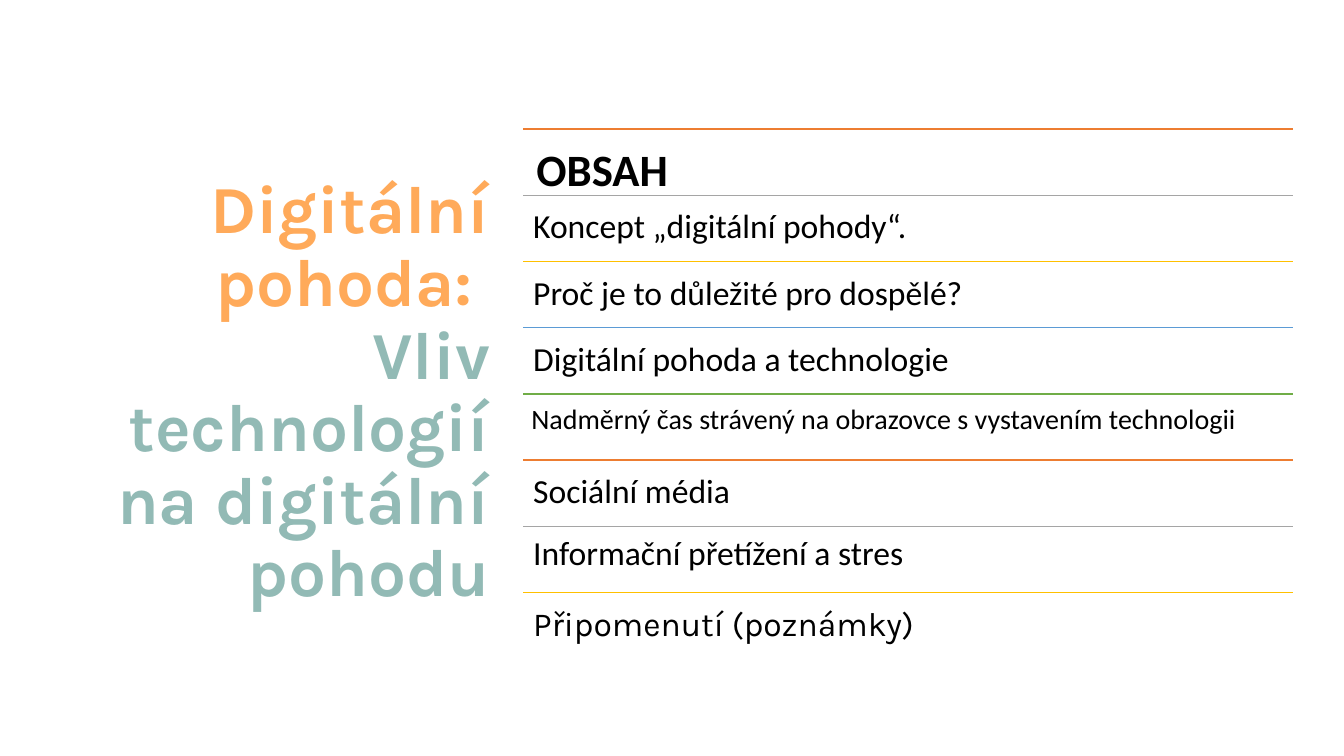
from pptx import Presentation
from pptx.dml.color import RGBColor
from pptx.enum import shapes, text
from pptx.oxml import ns
from pptx.util import Inches, Pt
from lxml import etree

ORANGE = RGBColor(0xFF, 0xAA, 0x5A)
TEAL = RGBColor(0x92, 0xBA, 0xB5)
BLACK = RGBColor(0, 0, 0)
RUST = RGBColor(0xED, 0x7D, 0x31)
GREY = RGBColor(0xA5, 0xA5, 0xA5)
GOLD = RGBColor(0xFF, 0xC0, 0x00)
BLUE = RGBColor(0x5B, 0x9B, 0xD5)
GREEN = RGBColor(0x70, 0xAD, 0x47)

LEFT, TOP, WIDTH, ROW_HEIGHT = 5.19, 1.28, 7.63, 0.657


def add_run(paragraph, words, size, font, color, bold=False):
    run = paragraph.add_run()
    run.text = words
    run.font.size = Pt(size)
    run.font.name = font
    run.font.bold = bold
    run.font.color.rgb = color


presentation = Presentation()
presentation.slide_width = Inches(13.33)
presentation.slide_height = Inches(7.5)
slide = presentation.slides.add_slide(presentation.slide_layouts[5])

title = slide.shapes.title
title.left, title.top = Inches(0.52), Inches(0.85)
title.width, title.height = Inches(4.44), Inches(6.11)
title.text_frame.word_wrap = True
title.text_frame.auto_size = text.MSO_AUTO_SIZE.NONE
title.text_frame.vertical_anchor = text.MSO_ANCHOR.MIDDLE
paragraph = title.text_frame.paragraphs[0]
paragraph.alignment = text.PP_ALIGN.RIGHT
paragraph.line_spacing = 0.9
add_run(paragraph, "Digitální pohoda: ", 48, "Karla", ORANGE, True)
paragraph.add_line_break()
add_run(paragraph, "Vliv technologií na digitální pohodu", 48, "Karla", TEAL, True)

contents = [
    ("OBSAH", 32, "Calibri", RUST, 0.13, 1.0),
    ("Koncept „digitální pohody“.", 24, "Calibri", GREY, 0.1, 1.0),
    ("Proč je to důležité pro dospělé?", 24, "Calibri", GOLD, 0.1, 1.0),
    ("Digitální pohoda a technologie", 24, "Calibri", BLUE, 0.1, 1.0),
    ("Nadměrný čas strávený na obrazovce s vystavením technologii", 20, "Calibri", GREEN, 0.08, 1.0),
    ("Sociální média", 24, "Calibri", RUST, 0.1, 1.0),
    ("Informační přetížení a stres", 24, "Calibri", GREY, 0.1, 0.9),
    ("Připomenutí (poznámky)", 24, "Karla", GOLD, 0.1, 1.0),
]

for index, (words, size, font, color, inset, spacing) in enumerate(contents):
    top = Inches(TOP + index * ROW_HEIGHT)
    divider = slide.shapes.add_connector(
        shapes.MSO_CONNECTOR.STRAIGHT, Inches(LEFT), top, Inches(LEFT + WIDTH), top)
    divider.line.color.rgb = color
    divider.line.width = Pt(1)
    etree.SubElement(divider._element.spPr, ns.qn("a:effectLst"))

    entry = slide.shapes.add_textbox(Inches(LEFT), top, Inches(WIDTH), Inches(ROW_HEIGHT))
    frame = entry.text_frame
    frame.word_wrap = True
    frame.margin_left = frame.margin_right = Inches(inset)
    frame.margin_top = frame.margin_bottom = Inches(inset)
    paragraph = frame.paragraphs[0]
    paragraph.line_spacing = spacing
    add_run(paragraph, words, size, font, BLACK, index == 0)

presentation.save("out.pptx")
